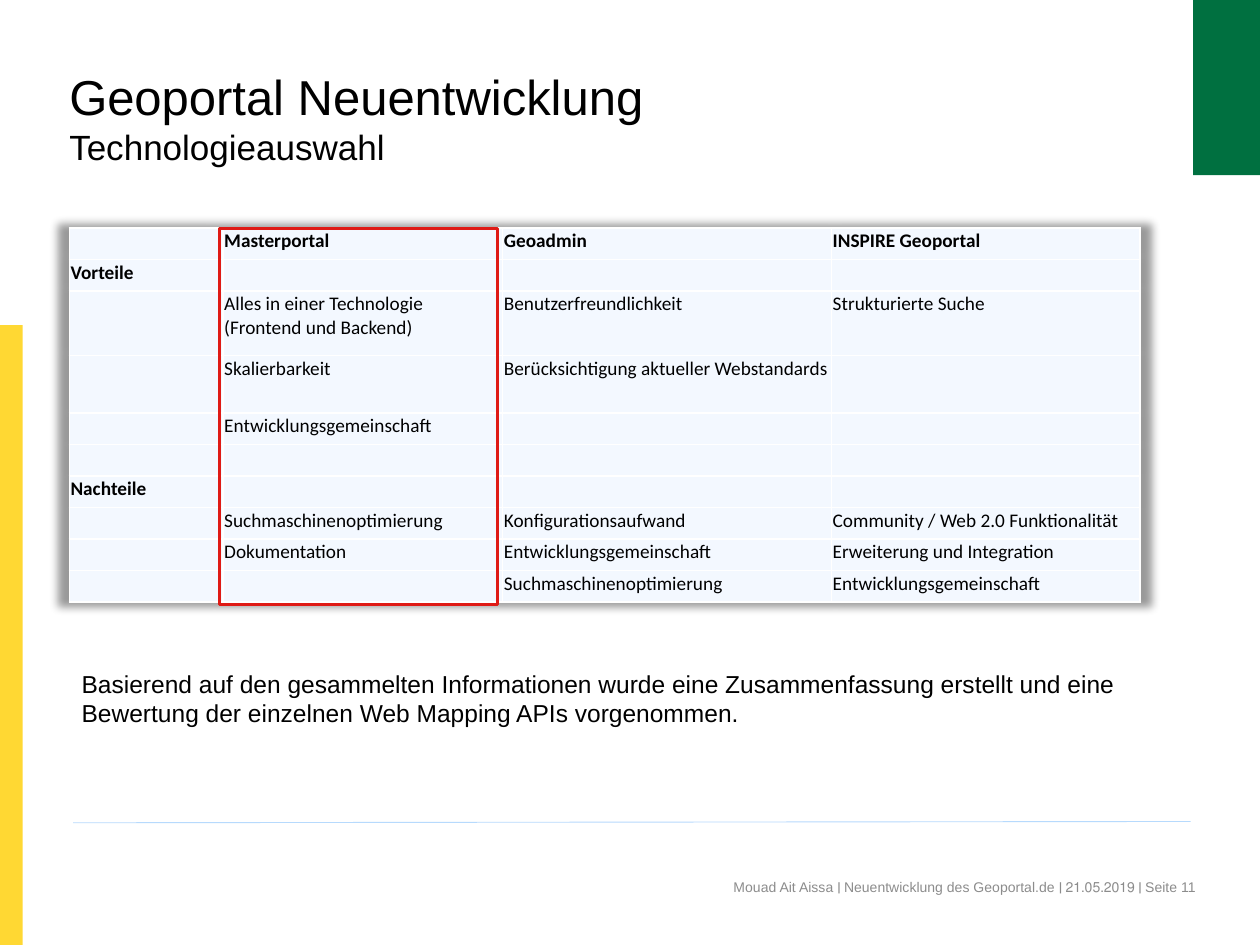
from dataclasses import dataclass

from lxml.etree import SubElement
from pptx import Presentation
from pptx.dml.color import RGBColor
from pptx.enum.shapes import MSO_CONNECTOR, MSO_SHAPE
from pptx.enum.text import PP_ALIGN
from pptx.oxml import parse_xml
from pptx.oxml.ns import nsdecls, qn
from pptx.slide import Slide
from pptx.table import _Cell
from pptx.util import Inches, Pt


@dataclass
class Bar:
    left: float
    top: float
    width: float
    height: float
    fill: str = ""
    line: str = ""


@dataclass
class Note:
    left: float
    top: float
    width: float
    height: float
    text: str
    sizes: tuple[float, ...]
    color: str = "000000"
    inset: tuple[float, ...] = (0, 0, 0, 0)
    align: PP_ALIGN = PP_ALIGN.LEFT


BARS = [
    Bar(0, 2.58, 0.18, 4.92, fill="FFD833"),
    Bar(9.47, -0.02, 0.53, 1.41, fill="007040"),
]
FRAME = Bar(1.74, 1.81, 2.21, 2.99, line="DF1A15")
NOTES = [
    Note(5, 6.97, 4.49, 0.4,
         "Mouad Ait Aissa ׀ Neuentwicklung des Geoportal.de ׀ 21.05.2019 ׀ Seite 11",
         (8,), "8C8C8C", (0, 0, 0, 0.05), PP_ALIGN.RIGHT),
    Note(0.55, 0.53, 5.6, 0.82,
         "Geoportal Neuentwicklung\vTechnologieauswahl", (28, 20)),
    Note(0.55, 5.26, 8.5, 0.57,
         "Basierend auf den gesammelten Informationen wurde eine Zusammenfassung "
         "erstellt und eine Bewertung der einzelnen Web Mapping APIs vorgenommen.",
         (14,), inset=(0.1, 0.05, 0.1, 0.05)),
]
COLS = [1.22, 2.22, 2.61, 2.45]
TALL = {2: 0.51, 3: 0.46}
ROWS = [
    ("", "Masterportal", "Geoadmin", "INSPIRE Geoportal"),
    ("Vorteile", "", "", ""),
    ("", "Alles in einer Technologie\v(Frontend und Backend)",
     "Benutzerfreundlichkeit", "Strukturierte Suche"),
    ("", "Skalierbarkeit", "Berücksichtigung aktueller Webstandards", ""),
    ("", "Entwicklungsgemeinschaft", "", ""),
    ("", "", "", ""),
    ("Nachteile", "", "", ""),
    ("", "Suchmaschinenoptimierung", "Konfigurationsaufwand",
     "Community / Web 2.0 Funktionalität"),
    ("", "Dokumentation", "Entwicklungsgemeinschaft", "Erweiterung und Integration"),
    ("", "", "Suchmaschinenoptimierung", "Entwicklungsgemeinschaft"),
]


def color(code: str) -> RGBColor:
    return RGBColor.from_string(code)


def draw_bar(slide: Slide, bar: Bar) -> None:
    shape = slide.shapes.add_shape(
        MSO_SHAPE.RECTANGLE, Inches(bar.left), Inches(bar.top),
        Inches(bar.width), Inches(bar.height))
    shape.shadow.inherit = False
    if bar.fill:
        shape.fill.solid()
        shape.fill.fore_color.rgb = color(bar.fill)
    else:
        shape.fill.background()
    if bar.line:
        shape.line.color.rgb = color(bar.line)
        shape.line.width = Pt(1.75)
    else:
        shape.line.fill.background()


def draw_note(slide: Slide, note: Note) -> None:
    box = slide.shapes.add_textbox(
        Inches(note.left), Inches(note.top), Inches(note.width), Inches(note.height))
    frame = box.text_frame
    frame.word_wrap = True
    (frame.margin_left, frame.margin_top,
     frame.margin_right, frame.margin_bottom) = map(Inches, note.inset)
    line = frame.paragraphs[0]
    line.text = note.text
    line.alignment = note.align
    for run, size in zip(line.runs, note.sizes):
        run.font.name = "Arial"
        run.font.size = Pt(size)
        run.font.color.rgb = color(note.color)


def draw_rule(slide: Slide) -> None:
    rule = slide.shapes.add_connector(
        MSO_CONNECTOR.STRAIGHT, Inches(0.58), Inches(6.53), Inches(9.45), Inches(6.52))
    rule.line.color.rgb = color("B7DAFD")
    rule.line.width = Pt(0.5)
    SubElement(rule._element.spPr, qn("a:effectLst"))


def fill_cell(cell: _Cell, text: str, bold: bool) -> None:
    cell.margin_left = cell.margin_top = cell.margin_right = Inches(0.01)
    cell.margin_bottom = 0
    line = cell.text_frame.paragraphs[0]
    line.text = text
    for run in line.runs:
        run.font.name = "Calibri"
        run.font.size = Pt(11)
        run.font.bold = bold
        run.font.color.rgb = color("000000")
    if not text:
        SubElement(line._p, qn("a:endParaRPr"), sz="1100")
    props = cell._tc.get_or_add_tcPr()
    for side in ("lnL", "lnR", "lnT", "lnB"):
        props.append(parse_xml(
            f'<a:{side} {nsdecls("a")} w="12700"><a:solidFill>'
            f'<a:srgbClr val="FFFFFF"/></a:solidFill></a:{side}>'))
    cell.fill.solid()
    cell.fill.fore_color.rgb = color("F3F8FF")


def draw_table(slide: Slide) -> None:
    table = slide.shapes.add_table(
        len(ROWS), len(COLS), Inches(0.55), Inches(1.81),
        Inches(8.5), Inches(2.99)).table
    table.first_row = table.horz_banding = False
    table._tbl.tblPr.insert(0, parse_xml(
        f'<a:effectLst {nsdecls("a")}><a:outerShdw blurRad="63500" sx="102000" '
        'sy="102000" algn="ctr" rotWithShape="0"><a:srgbClr val="000000">'
        '<a:alpha val="40000"/></a:srgbClr></a:outerShdw></a:effectLst>'))
    for col, width in zip(table.columns, COLS):
        col.width = Inches(width)
    for i, row in enumerate(ROWS):
        table.rows[i].height = Inches(TALL.get(i, 0.25))
        for j, text in enumerate(row):
            fill_cell(table.cell(i, j), text, i == 0 or j == 0)


def main() -> None:
    deck = Presentation()
    deck.slide_width, deck.slide_height = Inches(10), Inches(7.5)
    slide = deck.slides.add_slide(deck.slide_layouts[6])
    for bar in BARS:
        draw_bar(slide, bar)
    draw_rule(slide)
    draw_table(slide)
    for note in NOTES:
        draw_note(slide, note)
    draw_bar(slide, FRAME)
    deck.save("out.pptx")


if __name__ == "__main__":
    main()
